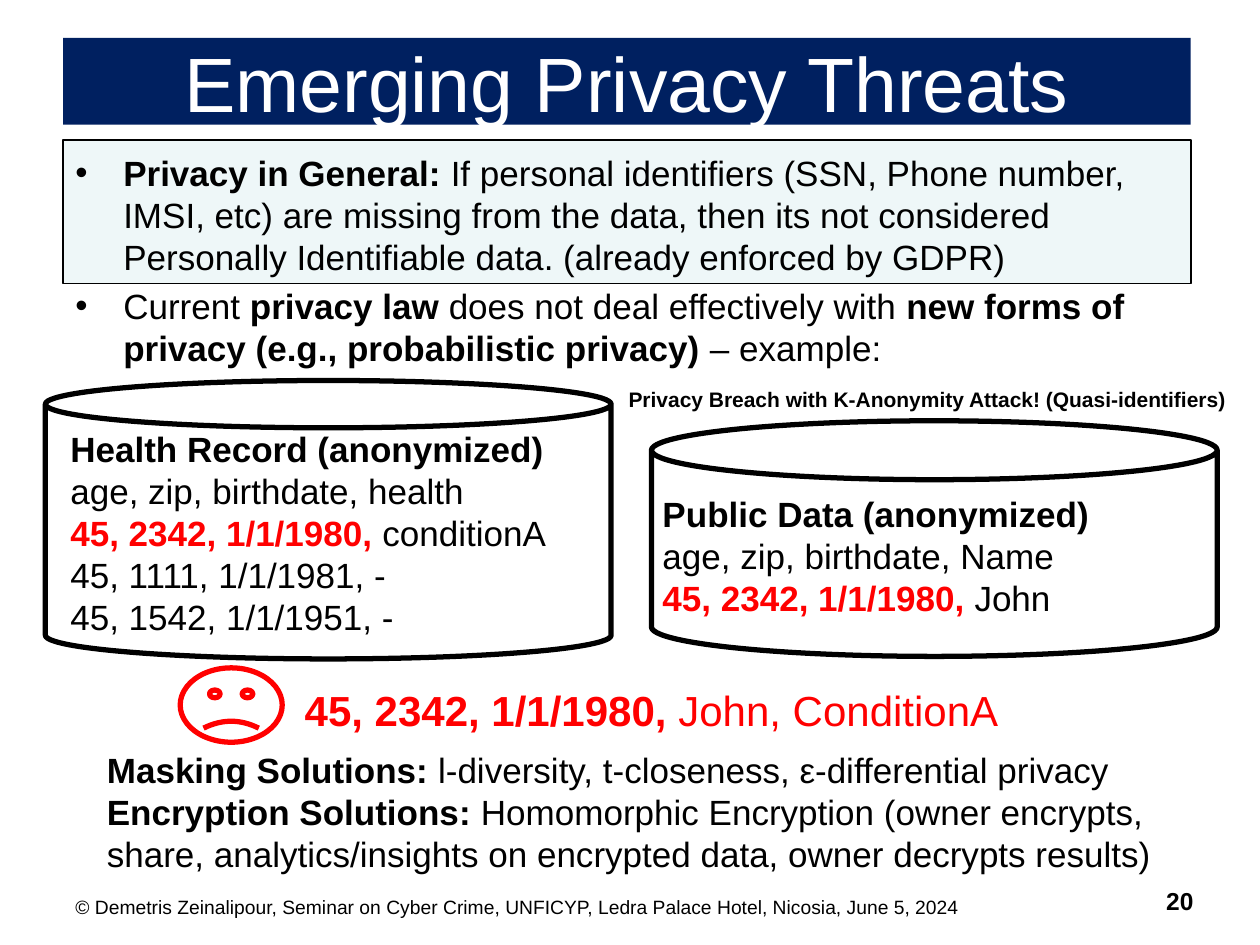
from dataclasses import dataclass

from lxml import etree
from pptx import Presentation
from pptx.dml.color import RGBColor
from pptx.enum.shapes import MSO_SHAPE
from pptx.enum.text import MSO_ANCHOR, PP_ALIGN
from pptx.oxml.ns import qn
from pptx.util import Inches, Pt

RECTANGLE, CAN, SMILEY = MSO_SHAPE.RECTANGLE, MSO_SHAPE.CAN, MSO_SHAPE.SMILEY_FACE
LEFT, CENTER, RIGHT = PP_ALIGN.LEFT, PP_ALIGN.CENTER, PP_ALIGN.RIGHT
TOP, MIDDLE = MSO_ANCHOR.TOP, MSO_ANCHOR.MIDDLE


@dataclass(frozen=True)
class Theme:
    font: str = "Arial"
    ink: str = "000000"
    alert: str = "FF0000"
    light: str = "FFFFFF"
    banner: str = "002060"
    tint: str = "BBE0E3"
    tint_opacity: int = 24
    title: int = 44
    result: int = 24
    body: int = 20
    number: int = 14
    caption: int = 12
    footer: int = 11
    thin: int = 1
    thick: int = 3
    indent: float = 0.38
    paragraph_gap: int = 4


THEME = Theme()
DECK_WIDTH, DECK_HEIGHT = Inches(10), Inches(7.5)

# Run styles: bold flag and colour
PLAIN, BOLD = (False, THEME.ink), (True, THEME.ink)
RED, RED_BOLD = (False, THEME.alert), (True, THEME.alert)
WHITE = (False, THEME.light)

# Content: each text is a list of paragraphs, each paragraph a list of runs
MATCH = ("45, 2342, 1/1/1980, ", RED_BOLD)
TITLE = [[("Emerging Privacy Threats", WHITE)]]
POINTS = [
    [("Privacy in General: ", BOLD),
     ("If personal identifiers (SSN, Phone number, IMSI, etc) are missing from the data, "
      "then its not considered Personally Identifiable data. (already enforced by GDPR)", PLAIN)],
    [("Current ", PLAIN), ("privacy law", BOLD), (" does not deal effectively with ", PLAIN),
     ("new forms of privacy (e.g., probabilistic privacy) ", BOLD), ("– example:", PLAIN)],
]
HEALTH = [
    [("Health Record (anonymized)", BOLD)],
    [("age, zip, birthdate, health", PLAIN)],
    [MATCH, ("conditionA", PLAIN)],
    [("45, 1111, 1/1/1981, -", PLAIN)],
    [("45, 1542, 1/1/1951, -", PLAIN)],
]
PUBLIC = [
    [("Public Data (anonymized)", BOLD)],
    [("age, zip, birthdate, Name", PLAIN)],
    [MATCH, ("John", PLAIN)],
]
RESULT = [[MATCH, ("John, ConditionA", RED)]]
SOLUTIONS = [
    [("Masking Solutions: ", BOLD),
     ("l-diversity, t-closeness, ε-differential privacy", PLAIN)],
    [("Encryption Solutions: ", BOLD),
     ("Homomorphic Encryption (owner encrypts, share, analytics/insights on encrypted data, "
      "owner decrypts results)", PLAIN)],
]
ATTACK = [[("Privacy Breach with K-Anonymity Attack! (Quasi-identifiers)", BOLD)]]
FOOTER = [[("© Demetris Zeinalipour, Seminar on Cyber Crime, UNFICYP, "
            "Ledra Palace Hotel, Nicosia, June 5, 2024", PLAIN)]]
NUMBER = [[("20", BOLD)]]

# Places: left, top, width, height as percent of the slide
MARGIN, CONTENT_WIDTH, CAN_WIDTH = 5, 89.5, 44.9
# kind, place, fill, line colour, line width, adjustment
SHAPES = [
    (RECTANGLE, (MARGIN, 14.8, CONTENT_WIDTH, 15.2), THEME.tint, THEME.ink, THEME.thin, None),
    (RECTANGLE, (MARGIN, 4, CONTENT_WIDTH, 9.2), THEME.banner, None, 0, None),
    (SMILEY, (14.3, 70.67, 8.1, 7.87), None, THEME.alert, THEME.thick, -0.05),
    (CAN, (3.6, 40.27, CAN_WIDTH, 29.47), None, THEME.ink, THEME.thick, 0.17),
    (CAN, (51.7, 44.53, CAN_WIDTH, 24.93), None, THEME.ink, THEME.thick, 0.25),
]
# content, place, type size, alignment, anchor, bulleted
TEXTS = [
    (TITLE, (MARGIN, 4, CONTENT_WIDTH, 9.2), THEME.title, CENTER, MIDDLE, False),
    (POINTS, (MARGIN, 15.33, CONTENT_WIDTH, 24), THEME.body, LEFT, TOP, True),
    (HEALTH, (4.6, 44.53, 47.1, 23.73), THEME.body, LEFT, TOP, False),
    (PUBLIC, (51.6, 51.47, 41.7, 14.8), THEME.body, LEFT, TOP, False),
    (RESULT, (23.2, 71.73, 59.8, 6.67), THEME.result, LEFT, TOP, False),
    (SOLUTIONS, (7.5, 78.53, 85, 14.8), THEME.body, LEFT, TOP, False),
    (ATTACK, (48.9, 40.27, 51, 4), THEME.caption, LEFT, TOP, False),
    (FOOTER, (MARGIN, 94.13, 90, 3.87), THEME.footer, LEFT, TOP, False),
    (NUMBER, (75.8, 93.07, 19.9, 4.8), THEME.number, RIGHT, TOP, False),
]


def place(percents):
    sides = (DECK_WIDTH, DECK_HEIGHT) * 2
    return [round(side * percent / 100) for side, percent in zip(sides, percents)]


def apply(target, values):
    for name, value in values.items():
        setattr(target, name, value)


def add_outline(page, kind, percents, fill, line, width, adjustment):
    shape = page.shapes.add_shape(kind, *place(percents))
    shape.shadow.inherit = False
    if adjustment is not None:
        shape.adjustments[0] = adjustment
    if fill:
        shape.fill.solid()
        shape.fill.fore_color.rgb = RGBColor.from_string(fill)
    else:
        shape.fill.background()
    if fill == THEME.tint:
        color = shape.fill._xPr.find(qn("a:solidFill"))[0]
        etree.SubElement(color, qn("a:alpha"), val=str(THEME.tint_opacity * 1000))
    if line:
        shape.line.color.rgb = RGBColor.from_string(line)
        shape.line.width = Pt(width)
    else:
        shape.line.fill.background()


def add_bullet(para):
    properties = para._p.get_or_add_pPr()
    indent = Inches(THEME.indent)
    properties.set("marL", str(indent))
    properties.set("indent", str(-indent))
    etree.SubElement(properties, qn("a:buFont"), typeface=THEME.font)
    etree.SubElement(properties, qn("a:buChar"), char="•")


def add_text(page, content, percents, size, alignment, anchor, bulleted):
    frame = page.shapes.add_textbox(*place(percents)).text_frame
    apply(frame, {"word_wrap": True, "vertical_anchor": anchor})
    for index, runs in enumerate(content):
        para = frame.add_paragraph() if index else frame.paragraphs[0]
        para.alignment = alignment
        if bulleted:
            add_bullet(para)
            if index:
                para.space_before = Pt(THEME.paragraph_gap)
        for text, (bold, color) in runs:
            span = para.add_run()
            span.text = text
            apply(span.font, {"name": THEME.font, "size": Pt(size), "bold": bold})
            span.font.color.rgb = RGBColor.from_string(color)


def main():
    deck = Presentation()
    apply(deck, {"slide_width": DECK_WIDTH, "slide_height": DECK_HEIGHT})
    page = deck.slides.add_slide(deck.slide_layouts[6])
    # Panels, face and data stores lie behind the text
    for shape in SHAPES:
        add_outline(page, *shape)
    for text in TEXTS:
        add_text(page, *text)
    deck.save("out.pptx")


if __name__ == "__main__":
    main()
